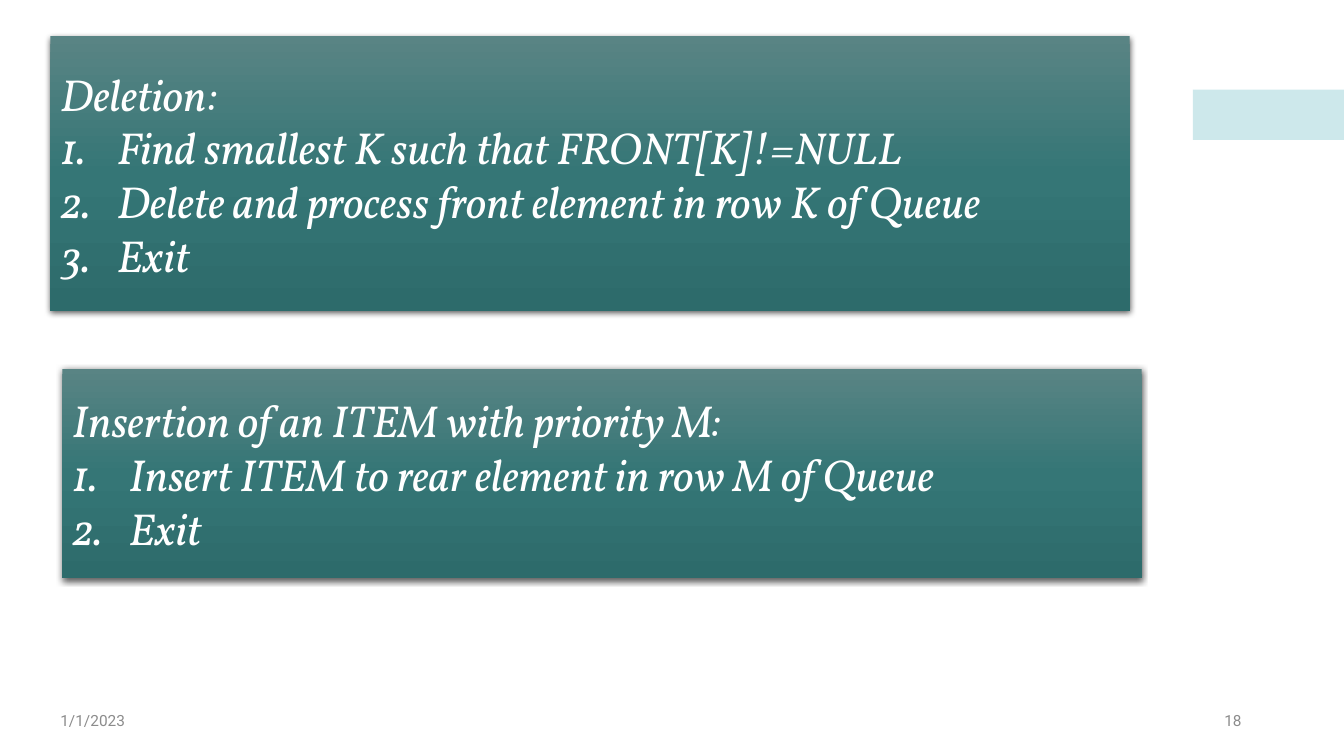
import lxml.etree
import pptx
import pptx.dml.color
import pptx.enum.shapes
import pptx.enum.text
import pptx.oxml
import pptx.oxml.ns
import pptx.util

Pt = pptx.util.Pt
qn = pptx.oxml.ns.qn
ALIGN = pptx.enum.text.PP_ALIGN
PANEL_GRADIENT = [(0, "598484"), (50, "357676"), (100, "2D6B6B")]
STEP_INDENT = 40.5
DELETION = [
    "Deletion:",
    "Find smallest K such that FRONT[K]!=NULL",
    "Delete and process front element in row K of Queue",
    "Exit",
]
INSERTION = [
    "Insertion of an ITEM with priority M:",
    "Insert ITEM to rear element in row M of Queue",
    "Exit",
]
PANEL_FONT = {"name": "Vollkorn", "size": Pt(32), "italic": True}
FOOTER_FONT = {"name": "Roboto", "size": Pt(11)}


def rgb(color):
    return pptx.dml.color.RGBColor.from_string(color)


def add_color(parent, color, alpha=None):
    """Append an XML colour, with its opacity in percent if given."""
    node = lxml.etree.SubElement(parent, qn("a:srgbClr"), val=color)
    if alpha is not None:
        lxml.etree.SubElement(node, qn("a:alpha"), val=str(alpha * 1000))


def write(paragraph, text, font, color, align):
    run = paragraph.add_run()
    run.text = text
    for key, value in font.items():
        setattr(run.font, key, value)
    run.font.color.rgb = rgb(color)
    paragraph.alignment = align


def add_rectangle(slide, left, top, width, height):
    rectangle = slide.shapes.add_shape(
        pptx.enum.shapes.MSO_SHAPE.RECTANGLE, Pt(left), Pt(top), Pt(width), Pt(height)
    )
    rectangle.shadow.inherit = False
    rectangle.line.fill.background()
    return rectangle


def add_accent(slide):
    accent = add_rectangle(slide, 852, 64, 108, 36)
    accent.fill.solid()
    accent.fill.fore_color.rgb = rgb("9CD3D9")
    color = accent.fill._xPr.find(qn("a:solidFill"))[0]
    lxml.etree.SubElement(color, qn("a:alpha"), val="50000")


def fill_gradient(panel):
    panel.fill.gradient()
    panel.fill.gradient_angle = 270
    stops = panel._element.spPr.find(".//" + qn("a:gsLst"))
    for stop in list(stops):
        stops.remove(stop)
    for position, color in PANEL_GRADIENT:
        stop = lxml.etree.SubElement(stops, qn("a:gs"), pos=str(position * 1000))
        add_color(stop, color)


def add_shadow(panel):
    effects = panel._element.spPr.find(qn("a:effectLst"))
    shadow = lxml.etree.SubElement(
        effects, qn("a:outerShdw"), blurRad=str(Pt(4.5)), dist=str(Pt(1.5)),
        dir="5400000", algn="ctr", rotWithShape="0",
    )
    add_color(shadow, "000000", 63)


def number_step(paragraph):
    properties = paragraph._p.get_or_add_pPr()
    properties.set("marL", str(Pt(STEP_INDENT)))
    properties.set("indent", str(-Pt(STEP_INDENT)))
    lxml.etree.SubElement(properties, qn("a:buFont"), typeface="+mj-lt")
    lxml.etree.SubElement(properties, qn("a:buAutoNum"), type="arabicPeriod")


def add_algorithm(slide, left, top, height, lines):
    """Add a shaded panel with a heading and numbered steps."""
    panel = add_rectangle(slide, left, top, 771, height)
    fill_gradient(panel)
    add_shadow(panel)
    frame = panel.text_frame
    frame.vertical_anchor = pptx.enum.text.MSO_ANCHOR.MIDDLE
    for index, line in enumerate(lines):
        paragraph = frame.add_paragraph() if index else frame.paragraphs[0]
        write(paragraph, line, PANEL_FONT, "FFFFFF", ALIGN.JUSTIFY)
        if index:
            number_step(paragraph)


def add_footer(slide, left, text, align):
    footer = slide.shapes.add_textbox(Pt(left), Pt(500.5), Pt(216), Pt(28.75))
    frame = footer.text_frame
    frame.word_wrap = True
    frame.vertical_anchor = pptx.enum.text.MSO_ANCHOR.MIDDLE
    write(frame.paragraphs[0], text, FOOTER_FONT, "8C8C8C", align)


def main():
    deck = pptx.Presentation()
    deck.slide_width, deck.slide_height = Pt(960), Pt(540)
    slide = deck.slides.add_slide(deck.slide_layouts[6])
    add_accent(slide)
    add_footer(slide, 36, "1/1/2023", ALIGN.LEFT)
    add_footer(slide, 678, "18", ALIGN.RIGHT)
    add_algorithm(slide, 36, 26, 196.5, DELETION)
    add_algorithm(slide, 44.5, 263.25, 150, INSERTION)
    deck.save("out.pptx")


if __name__ == "__main__":
    main()
